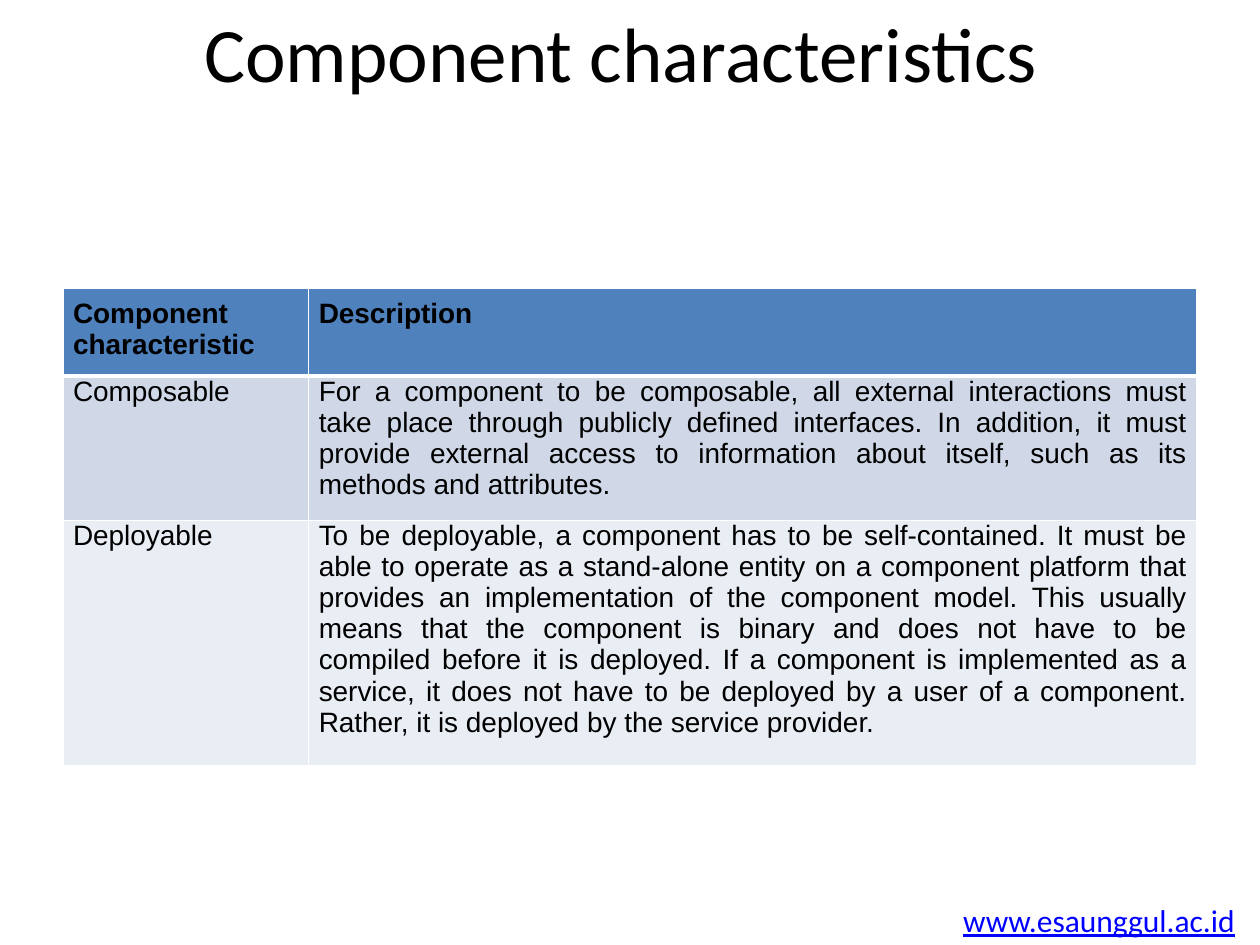
from dataclasses import dataclass

from lxml import etree
from pptx import Presentation
from pptx.dml.color import RGBColor
from pptx.enum.text import MSO_ANCHOR, MSO_AUTO_SIZE, PP_ALIGN
from pptx.oxml.ns import qn
from pptx.util import Inches, Pt

CENTER, JUSTIFY, RIGHT = PP_ALIGN.CENTER, PP_ALIGN.JUSTIFY, PP_ALIGN.RIGHT
TOP = MSO_ANCHOR.TOP
NO_AUTOFIT = MSO_AUTO_SIZE.NONE
TITLE_ONLY = 5
SLIDE_WIDTH, SLIDE_HEIGHT = Inches(10), Inches(7.5)


@dataclass(frozen=True)
class Theme:
    heading_font: str = "Calibri"
    table_font: str = "Arial"
    title_size: int = 44
    footer_size: int = 18
    table_size: int = 16
    text: str = "000000"
    link: str = "0000FF"
    rule: str = "FFFFFF"
    header_fill: str = "4F81BD"
    band_fills: tuple = ("D0D8E8", "E9EDF4")
    cell_inset: float = 0.08
    thin_rule: int = 1
    header_rule: int = 3


THEME = Theme()

COLUMN_SHARES = (1.95 / 9, 7.05 / 9)
ROW_SHARES = (0.65 / 3.51, 1.06 / 3.51, 1.8 / 3.51)
CHARACTERISTICS = (
    ("Component characteristic", "Description"),
    (
        "Composable",
        "For a component to be composable, all external interactions must take "
        "place through publicly defined interfaces. In addition, it must provide "
        "external access to information about itself, such as its methods and "
        "attributes.",
    ),
    (
        "Deployable",
        "To be deployable, a component has to be self-contained. It must be able "
        "to operate as a stand-alone entity on a component platform that provides "
        "an implementation of the component model. This usually means that the "
        "component is binary and does not have to be compiled before it is "
        "deployed. If a component is implemented as a service, it does not have "
        "to be deployed by a user of a component. Rather, it is deployed by the "
        "service provider. ",
    ),
)


def slide_box(left, top, width, height):
    """Turn shares of the slide into a box in EMU."""
    return (
        round(left * SLIDE_WIDTH),
        round(top * SLIDE_HEIGHT),
        round(width * SLIDE_WIDTH),
        round(height * SLIDE_HEIGHT),
    )


def set_attributes(target, values):
    for name, value in values.items():
        setattr(target, name, value)


def write_text(frame, text, align, color, **font_values):
    paragraph = frame.paragraphs[0]
    paragraph.alignment = align
    run = paragraph.add_run()
    run.text = text
    set_attributes(run.font, font_values)
    run.font.color.rgb = RGBColor.from_string(color)


def add_title(slide, box):
    title = slide.shapes.title
    set_attributes(title, dict(zip(("left", "top", "width", "height"), box)))
    set_attributes(
        title.text_frame,
        {"word_wrap": True, "auto_size": NO_AUTOFIT, "vertical_anchor": TOP},
    )
    write_text(title.text_frame, "Component characteristics ", CENTER, THEME.text,
               name=THEME.heading_font, size=Pt(THEME.title_size))


def add_footer(slide, box):
    frame = slide.shapes.add_textbox(*box).text_frame
    frame.word_wrap = False
    write_text(frame, "www.esaunggul.ac.id", RIGHT, THEME.link, underline=True,
               name=THEME.heading_font, size=Pt(THEME.footer_size))


def add_borders(cell, widths):
    properties = cell._tc.get_or_add_tcPr()
    for side, width in widths.items():
        line = etree.SubElement(properties, qn(f"a:ln{side}"), w=str(Pt(width)))
        fill = etree.SubElement(line, qn("a:solidFill"))
        etree.SubElement(fill, qn("a:srgbClr"), val=THEME.rule)


def format_cell(cell, text, row_index):
    is_header = row_index == 0
    inset = Inches(THEME.cell_inset)
    set_attributes(cell, {
        "margin_left": inset,
        "margin_right": inset,
        "margin_top": inset if is_header else 0,
        "margin_bottom": inset,
        "vertical_anchor": TOP,
    })
    widths = dict.fromkeys("LRTB", THEME.thin_rule)
    if is_header:
        widths["B"] = THEME.header_rule
    elif row_index == 1:
        widths["T"] = THEME.header_rule
    add_borders(cell, widths)
    bands = THEME.band_fills
    color = THEME.header_fill if is_header else bands[(row_index - 1) % len(bands)]
    cell.fill.solid()
    cell.fill.fore_color.rgb = RGBColor.from_string(color)
    write_text(cell.text_frame, text, JUSTIFY, THEME.text, bold=is_header,
               name=THEME.table_font, size=Pt(THEME.table_size))


def add_characteristics_table(slide, box):
    table = slide.shapes.add_table(
        len(CHARACTERISTICS), len(COLUMN_SHARES), *box).table
    for column, share in zip(table.columns, COLUMN_SHARES):
        column.width = round(box[2] * share)
    for row, share in zip(table.rows, ROW_SHARES):
        row.height = round(box[3] * share)
    for row_index, entries in enumerate(CHARACTERISTICS):
        for column_index, text in enumerate(entries):
            format_cell(table.cell(row_index, column_index), text, row_index)


def main():
    presentation = Presentation()
    presentation.slide_width = SLIDE_WIDTH
    presentation.slide_height = SLIDE_HEIGHT
    slide = presentation.slides.add_slide(presentation.slide_layouts[TITLE_ONLY])
    add_footer(slide, slide_box(0.75, 7.1 / 7.5, 0.24, 0.4 / 7.5))
    add_title(slide, slide_box(0.05, -0.01 / 7.5, 0.9, 1.25 / 7.5))
    add_characteristics_table(slide, slide_box(0.05, 2.29 / 7.5, 0.9, 3.51 / 7.5))
    presentation.save("out.pptx")


if __name__ == "__main__":
    main()
